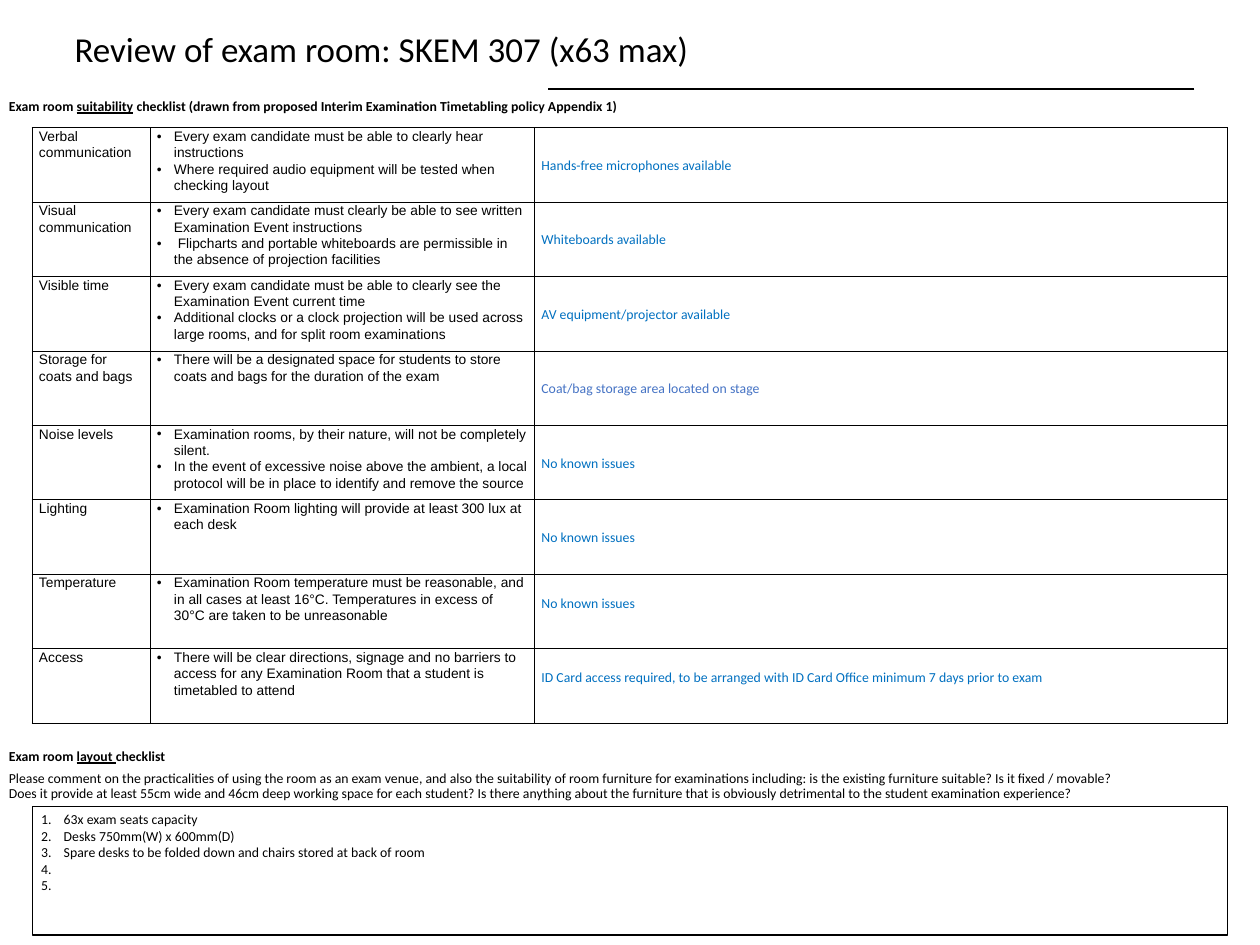
from dataclasses import dataclass

from lxml.etree import SubElement
from pptx import Presentation
from pptx.dml.color import RGBColor
from pptx.enum.shapes import MSO_CONNECTOR, MSO_SHAPE
from pptx.enum.text import MSO_ANCHOR, MSO_AUTO_SIZE, PP_ALIGN
from pptx.oxml.ns import qn
from pptx.slide import Slide
from pptx.util import Cm, Pt

CHECKLIST = [
    ("Verbal communication",
     ["Every exam candidate must be able to clearly hear instructions",
      "Where required audio equipment will be tested when checking layout"],
     "Hands-free microphones available"),
    ("Visual communication",
     ["Every exam candidate must clearly be able to see written Examination Event instructions",
      " Flipcharts and portable whiteboards are permissible in the absence of projection facilities"],
     "Whiteboards available"),
    ("Visible time",
     ["Every exam candidate must be able to clearly see the Examination Event current time",
      "Additional clocks or a clock projection will be used across large rooms, "
      "and for split room examinations"],
     "AV equipment/projector available"),
    ("Storage for coats and bags",
     ["There will be a designated space for students to store coats and bags "
      "for the duration of the exam"],
     "Coat/bag storage area located on stage"),
    ("Noise levels",
     ["Examination rooms, by their nature, will not be completely silent.",
      "In the event of excessive noise above the ambient, a local protocol "
      "will be in place to identify and remove the source"],
     "No known issues"),
    ("Lighting",
     ["Examination Room lighting will provide at least 300 lux at each desk"],
     "No known issues"),
    ("Temperature",
     ["Examination Room temperature must be reasonable, and in all cases at least 16°C. "
      "Temperatures in excess of 30°C are taken to be unreasonable"],
     "No known issues"),
    ("Access",
     ["There will be clear directions, signage and no barriers to access for any "
      "Examination Room that a student is timetabled to attend"],
     "ID Card access required, to be arranged with ID Card Office minimum 7 days prior to exam"),
]
COMMENT_COLORS = {"Storage for coats and bags": "4472C4"}
RAISED_COMMENTS = ("Temperature", "Access")
LAYOUT_QUESTION = (
    "Please comment on the practicalities of using the room as an exam venue, and also the "
    "suitability of room furniture for examinations including: is the existing furniture "
    "suitable? Is it fixed / movable? Does it provide at least 55cm wide and 46cm deep working "
    "space for each student? Is there anything about the furniture that is obviously "
    "detrimental to the student examination experience?")
LAYOUT_REMARKS = ["63x exam seats capacity", "Desks 750mm(W) x 600mm(D)",
                  "Spare desks to be folded down and chairs stored at back of room"]
OPEN_REMARKS = ["4.", "5."]


def color(value):
    return RGBColor.from_string(value)


def write(paragraph, text, font="Calibri", size=11, ink="000000", bold=False, underline=False):
    run = paragraph.add_run()
    run.text = text
    run.font.name = font
    run.font.size = Pt(size)
    run.font.color.rgb = color(ink)
    run.font.bold = bold
    run.font.underline = underline


def add_marker(paragraph, indent, tag, **attributes):
    """Give the paragraph a hanging indent and a bullet or number."""
    properties = paragraph._p.get_or_add_pPr()
    properties.set("marL", str(Cm(indent)))
    properties.set("indent", str(-Cm(indent)))
    SubElement(properties, qn("a:buFont"), typeface="Arial")
    SubElement(properties, qn(tag), **attributes)


def paragraphs(frame, count):
    """Return the frame's first paragraph and enough new ones to make count."""
    return [frame.paragraphs[0]] + [frame.add_paragraph() for _ in range(count - 1)]


def add_borders(cell, ink, width):
    properties = cell._tc.get_or_add_tcPr()
    for side in ("a:lnL", "a:lnR", "a:lnT", "a:lnB"):
        border = SubElement(properties, qn(side), w=str(Pt(width)))
        fill = SubElement(border, qn("a:solidFill"))
        SubElement(fill, qn("a:srgbClr"), val=ink)


@dataclass
class ReviewSlide:
    slide: Slide
    ink: str = "000000"
    paper: str = "FFFFFF"
    comment_ink: str = "0070C0"
    line_width: float = 1
    left: float = 0.91
    column_widths: tuple = (3.33, 10.85, 19.55)
    row_height: float = 2.1

    def title(self, text):
        title = self.slide.shapes.title
        title.left, title.top, title.width, title.height = Cm(1.85), Cm(0.66), Cm(31.85), Cm(2.64)
        frame = title.text_frame
        frame.auto_size = MSO_AUTO_SIZE.NONE
        frame.vertical_anchor = MSO_ANCHOR.TOP
        frame.paragraphs[0].alignment = PP_ALIGN.LEFT
        write(frame.paragraphs[0], text, size=28, ink=self.ink)

    def rule(self, start, end, top):
        line = self.slide.shapes.add_connector(
            MSO_CONNECTOR.STRAIGHT, Cm(start), Cm(top), Cm(end), Cm(top))
        line.line.color.rgb = color(self.ink)
        line.line.width = Pt(self.line_width)
        SubElement(line._element.spPr, qn("a:effectLst"))

    def heading(self, top, height, before, underlined, after, body=None):
        box = self.slide.shapes.add_textbox(Cm(0), Cm(top), Cm(32.21), Cm(height))
        frame = box.text_frame
        frame.word_wrap = True
        heading = frame.paragraphs[0]
        heading.line_spacing = 0.9
        write(heading, before, bold=True)
        write(heading, underlined, bold=True, underline=True)
        write(heading, after, bold=True)
        if body:
            paragraph = frame.add_paragraph()
            paragraph.line_spacing = 0.9
            paragraph.space_before = Pt(6)
            write(paragraph, body)

    def cell(self, cell, texts, bulleted=False, **style):
        cell.margin_left = cell.margin_right = Cm(0.19)
        cell.margin_top = cell.margin_bottom = Cm(0)
        for paragraph, text in zip(paragraphs(cell.text_frame, len(texts)), texts):
            paragraph.line_spacing = 1.07
            if bulleted:
                add_marker(paragraph, 0.48, "a:buChar", char="•")
            write(paragraph, text, **style)
        add_borders(cell, self.ink, self.line_width)
        cell.fill.background()

    def checklist(self, top, rows):
        table = self.slide.shapes.add_table(
            len(rows), len(self.column_widths), Cm(self.left), Cm(top),
            Cm(sum(self.column_widths)), Cm(self.row_height * len(rows))).table
        table.first_row = table.horz_banding = False
        for column, width in zip(table.columns, self.column_widths):
            column.width = Cm(width)
        for row, (topic, rules, comment) in zip(table.rows, rows):
            row.height = Cm(self.row_height)
            topic_cell, rules_cell, comment_cell = row.cells
            self.cell(topic_cell, [topic], font="Arial")
            self.cell(rules_cell, rules, bulleted=True, font="Arial")
            self.cell(comment_cell, [comment], ink=COMMENT_COLORS.get(topic, self.comment_ink))
            comment_cell.vertical_anchor = MSO_ANCHOR.MIDDLE
            if topic in RAISED_COMMENTS:
                comment_cell.margin_bottom = Cm(0.48)

    def remarks(self, top, height, numbered, plain):
        box = self.slide.shapes.add_shape(
            MSO_SHAPE.RECTANGLE, Cm(self.left), Cm(top), Cm(sum(self.column_widths)), Cm(height))
        box.shadow.inherit = False
        box.fill.solid()
        box.fill.fore_color.rgb = color(self.paper)
        box.line.color.rgb = color(self.ink)
        box.line.width = Pt(self.line_width)
        frame = box.text_frame
        frame.word_wrap = True
        frame.vertical_anchor = MSO_ANCHOR.TOP
        texts = numbered + plain
        for index, paragraph in enumerate(paragraphs(frame, len(texts))):
            paragraph.alignment = PP_ALIGN.LEFT
            if index < len(numbered):
                add_marker(paragraph, 0.64, "a:buAutoNum", type="arabicPeriod")
            write(paragraph, texts[index], ink=self.ink)


def main():
    presentation = Presentation()
    presentation.slide_width, presentation.slide_height = Cm(35.56), Cm(26.67)
    review = ReviewSlide(presentation.slides.add_slide(presentation.slide_layouts[5]))
    review.title("Review of exam room: SKEM 307 (x63 max)")
    review.rule(33.71, 15.47, 2.51)
    review.heading(2.69, 0.7, "Exam room ", "suitability",
                   " checklist (drawn from proposed Interim Examination Timetabling policy Appendix 1)")
    review.checklist(3.61, CHECKLIST)
    review.heading(21.03, 1.7, "Exam room ", "layout ", "checklist", LAYOUT_QUESTION)
    review.remarks(22.76, 3.63, LAYOUT_REMARKS, OPEN_REMARKS)
    presentation.save("out.pptx")


if __name__ == "__main__":
    main()
